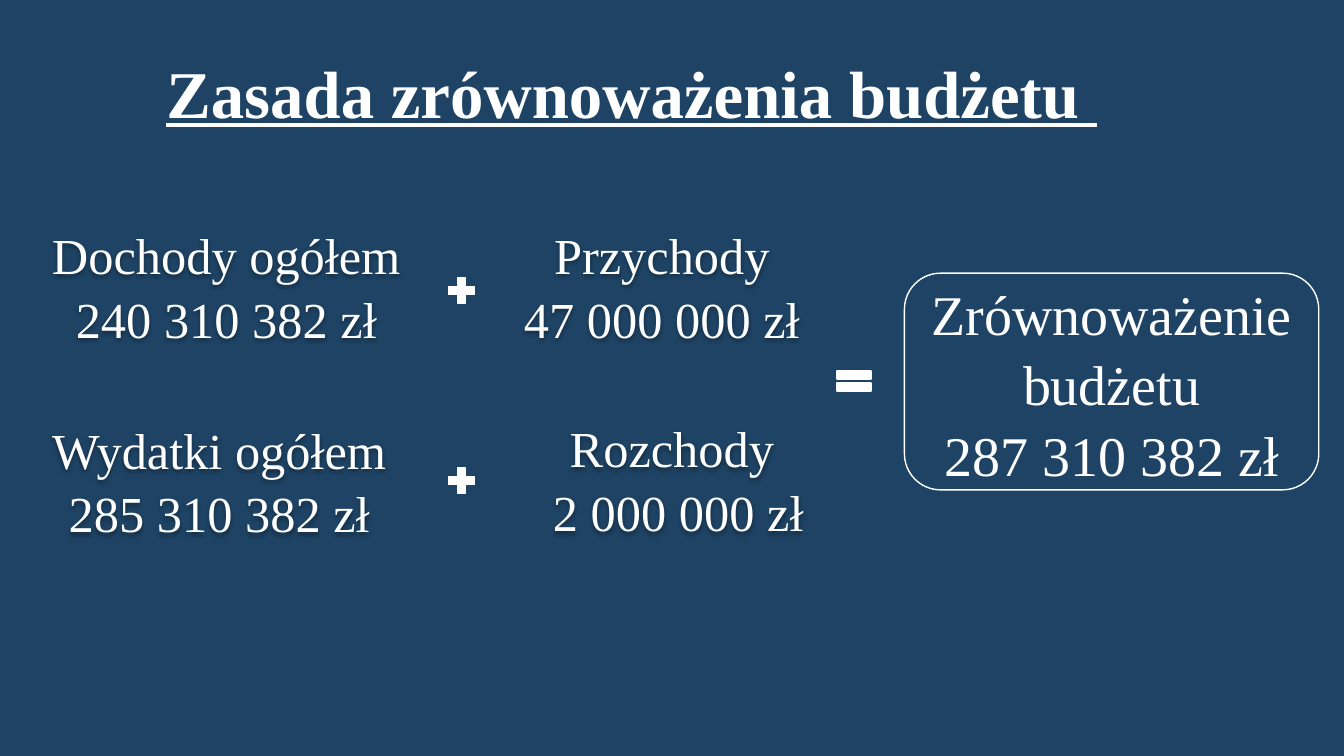
from lxml.etree import SubElement
from pptx import Presentation
from pptx.dml.color import RGBColor
from pptx.enum.shapes import MSO_SHAPE
from pptx.enum.text import MSO_ANCHOR, PP_ALIGN
from pptx.oxml.ns import qn
from pptx.util import Inches, Pt

# Content: text lines, then left, top, width, height in inches
COLORS = {"back": "1E4364", "ink": "FFFFFF", "shadow": "000000"}
FONT = "Times New Roman"
TITLE = "Zasada zrównoważenia budżetu "
TITLE_BOX = (1.1, 0.63, 9.97, 1.12)
TERM_W = 3.83
TERMS = [
    (["Dochody ogółem", "240 310 382 zł"], (0.33, 2.29, TERM_W, 1.32)),
    (["Wydatki ogółem", "285 310 382 zł"], (0.26, 4.22, TERM_W, 1.32)),
    (["Przychody", "47 000 000 zł"], (4.65, 2.35, TERM_W, 1.2)),
    (["Rozchody", " 2 000 000 zł"], (4.75, 4.28, TERM_W, 1.17)),
]
RESULT = ["Zrównoważenie budżetu", "287 310 382 zł"]
RESULT_BOX = (8.97, 2.71, 4.11, 2.15)
SIGNS = [
    (MSO_SHAPE.MATH_PLUS, (4.4, 2.71, 0.35, 0.34)),
    (MSO_SHAPE.MATH_EQUAL, (8.24, 3.61, 0.46, 0.34)),
    (MSO_SHAPE.MATH_PLUS, (4.4, 4.6, 0.35, 0.34)),
]

prs = Presentation()
prs.slide_width, prs.slide_height = Inches(13.33), Inches(7.5)
s = prs.slides.add_slide(prs.slide_layouts[6])


def color(name):
    return RGBColor.from_string(COLORS[name])


def write(sp, lines, size, align=PP_ALIGN.CENTER, anchor=MSO_ANCHOR.MIDDLE,
          spacing=1.05, insets=(0.1, 0.05, 0.1, 0.05), bold=False, underline=False):
    tf = sp.text_frame
    tf.word_wrap = True
    tf.vertical_anchor = anchor
    (tf.margin_left, tf.margin_top,
     tf.margin_right, tf.margin_bottom) = map(Inches, insets)
    for i, line in enumerate(lines):
        p = tf.add_paragraph() if i else tf.paragraphs[0]
        p.alignment, p.line_spacing = align, spacing
        r = p.add_run()
        r.text = line
        r.font.name, r.font.size = FONT, Pt(size)
        r.font.bold, r.font.underline = bold, underline
        r.font.color.rgb = color("ink")


def add_shape(kind, box, fill=None, line=None):
    sp = s.shapes.add_shape(kind, *map(Inches, box))
    sp.shadow.inherit = False
    if fill:
        sp.fill.solid()
        sp.fill.fore_color.rgb = color(fill)
    else:
        sp.fill.background()
    if line:
        sp.line.color.rgb = color(line)
        sp.line.width = Pt(1)
    else:
        sp.line.fill.background()
    return sp


def add_soft_shadow(sp):
    effects = sp._element.spPr.find(qn("a:effectLst"))
    shadow = SubElement(effects, qn("a:outerShdw"), blurRad="40000", dist="23000",
                        dir="5400000", rotWithShape="0")
    tint = SubElement(shadow, qn("a:srgbClr"), val=COLORS["shadow"])
    SubElement(tint, qn("a:alpha"), val="35000")


# Background and title
s.background.fill.solid()
s.background.fill.fore_color.rgb = color("back")
title = s.shapes.add_textbox(*map(Inches, TITLE_BOX))
write(title, [TITLE], 47.7, align=PP_ALIGN.LEFT, anchor=MSO_ANCHOR.TOP, spacing=0.85,
      insets=(0.55, 0, 0, 0), bold=True, underline=True)

# Terms of the equation, raised a little inside their boxes
for lines, box in TERMS:
    sp = add_shape(MSO_SHAPE.ROUNDED_RECTANGLE, box)
    add_soft_shadow(sp)
    write(sp, lines, 36, insets=(0.1, 0.05, 0.1, 0.3))

# Result
write(add_shape(MSO_SHAPE.ROUNDED_RECTANGLE, RESULT_BOX, line="ink"), RESULT, 40)

# Signs between the terms
for kind, box in SIGNS:
    add_shape(kind, box, fill="ink", line="ink")

prs.save("out.pptx")
